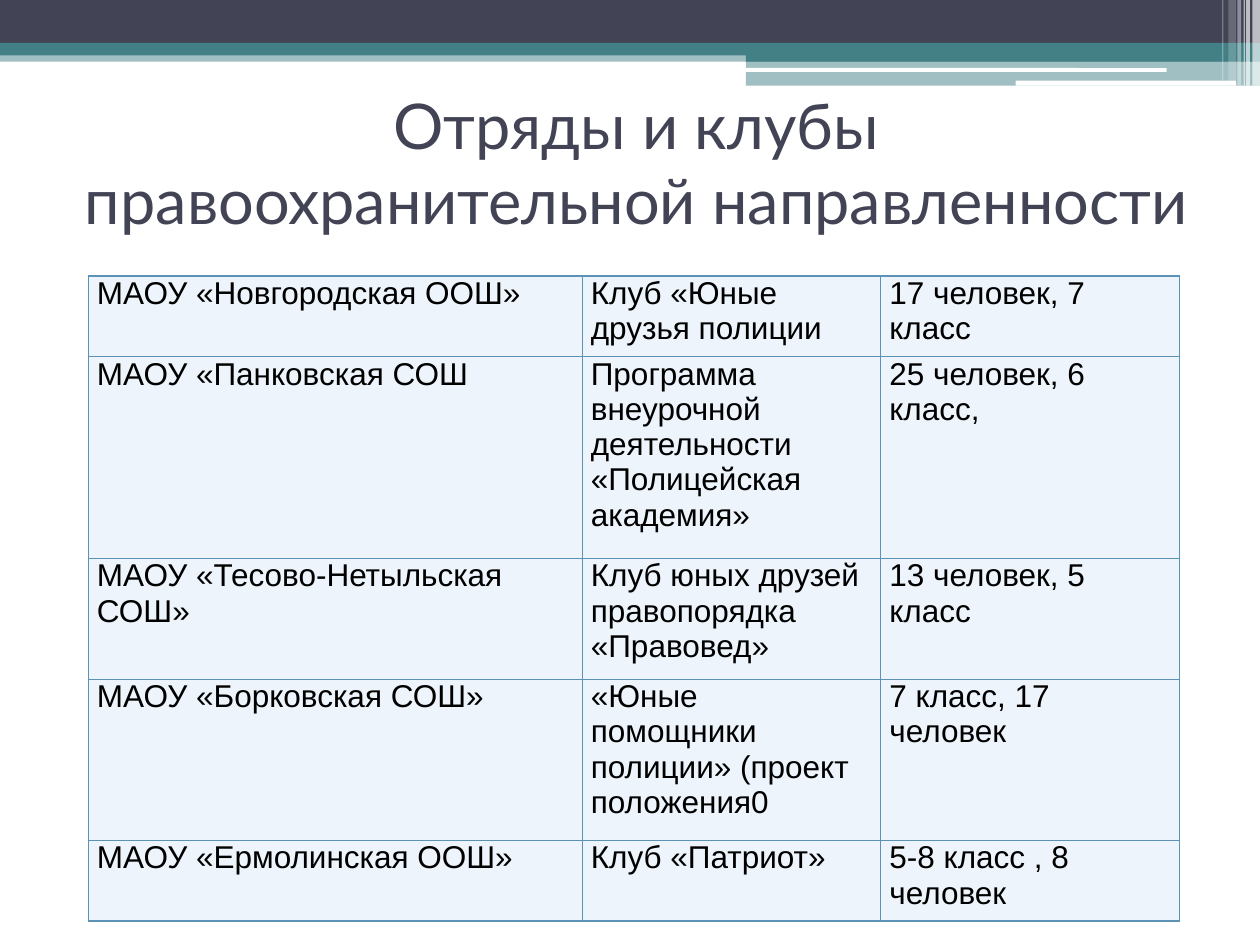
from lxml.etree import SubElement
from pptx import Presentation
from pptx.dml.color import RGBColor
from pptx.enum.shapes import MSO_SHAPE
from pptx.enum.text import MSO_ANCHOR, PP_ALIGN
from pptx.oxml import parse_xml
from pptx.oxml.ns import nsdecls, qn
from pptx.util import Inches, Pt

NAVY = RGBColor(0x42, 0x44, 0x56)
TEAL = RGBColor(0x43, 0x80, 0x86)
WHITE = RGBColor(0xFF, 0xFF, 0xFF)
BLACK = RGBColor(0, 0, 0)
PALE = RGBColor(0xED, 0xF4, 0xFB)
EDGE = RGBColor(0x5C, 0x92, 0xB5)

# left, top, width, height, colour, opacity in percent
BANDS = [
    (0, 0.4, 10, 0.09, TEAL, 50),
    (0, 0, 10, 0.34, NAVY, 100),
    (0, 0.34, 10, 0.1, TEAL, 100),
    (5.92, 0.39, 4.08, 0.1, TEAL, 100),
    (5.92, 0.48, 4.08, 0.2, TEAL, 50),
]
BARS = [
    (5.91, 0.54, 3.35, 0.03, WHITE, 100),
    (8.06, 0.64, 1.75, 0.04, WHITE, 100),
]
# left, width, height, opacity of the upright stripes
STRIPES = [
    (9.94, 0.06, 0.68, 65),
    (9.89, 0.03, 0.68, 65),
    (9.87, 0.01, 0.68, 60),
    (9.82, 0.03, 0.68, 40),
    (9.75, 0.06, 0.64, 20),
    (9.7, 0.01, 0.64, 30),
]

COLS = [3.92, 2.37, 2.37]
ROWS = [0.64, 1.6, 0.96, 1.28, 0.64]
CLUBS = [
    ("МАОУ «Новгородская ООШ»", "Клуб «Юные друзья полиции",
     "17 человек, 7 класс"),
    ("МАОУ «Панковская СОШ",
     "Программа внеурочной деятельности «Полицейская академия»",
     "25 человек, 6 класс,"),
    ("МАОУ «Тесово-Нетыльская СОШ»",
     "Клуб юных друзей правопорядка «Правовед»", "13 человек, 5 класс"),
    ("МАОУ «Борковская СОШ»",
     "«Юные помощники полиции» (проект положения0", "7 класс, 17 человек"),
    ("МАОУ «Ермолинская ООШ»", "Клуб «Патриот»", "5-8 класс , 8 человек"),
]


def style(para, name, size, color):
    para.font.name = name
    para.font.size = Pt(size)
    para.font.color.rgb = color


def add_block(slide, kind, left, top, width, height, color, alpha):
    block = slide.shapes.add_shape(
        kind, Inches(left), Inches(top), Inches(width), Inches(height))
    block.shadow.inherit = False
    block.line.fill.background()
    block.fill.solid()
    block.fill.fore_color.rgb = color
    if alpha < 100:
        tint = block.fill._xPr.find(qn("a:solidFill"))[0]
        SubElement(tint, qn("a:alpha"), val=str(alpha * 1000))


def add_title(slide, text):
    box = slide.shapes.add_textbox(
        Inches(0.55), Inches(0.7), Inches(9), Inches(1.17))
    frame = box.text_frame
    frame.word_wrap = True
    frame.vertical_anchor = MSO_ANCHOR.MIDDLE
    para = frame.paragraphs[0]
    para.text = text
    para.alignment = PP_ALIGN.CENTER
    style(para, "Lato", 36, NAVY)


def add_edges(cell):
    props = cell._tc.get_or_add_tcPr()
    for place, side in enumerate("LRTB"):
        props.insert(place, parse_xml(
            f'<a:ln{side} {nsdecls("a")} w="{Pt(0.75)}"><a:solidFill>'
            f'<a:srgbClr val="{EDGE}"/></a:solidFill></a:ln{side}>'))


def fill_cell(cell, text):
    cell.fill.solid()
    cell.fill.fore_color.rgb = PALE
    cell.margin_left = cell.margin_right = Inches(0.07)
    cell.margin_top = cell.margin_bottom = 0
    cell.text = text
    style(cell.text_frame.paragraphs[0], "Arial", 18, BLACK)
    add_edges(cell)


def add_clubs(slide):
    table = slide.shapes.add_table(
        len(ROWS), len(COLS), Inches(0.7), Inches(2.19),
        Inches(sum(COLS)), Inches(sum(ROWS))).table
    table.first_row = table.horz_banding = False
    for col, width in zip(table.columns, COLS):
        col.width = Inches(width)
    for row, height, texts in zip(table.rows, ROWS, CLUBS):
        row.height = Inches(height)
        for cell, text in zip(row.cells, texts):
            fill_cell(cell, text)


def main():
    deck = Presentation()
    deck.slide_width, deck.slide_height = Inches(10), Inches(7.5)
    slide = deck.slides.add_slide(deck.slide_layouts[6])

    # Header bands, white bars and stripes
    for band in BANDS:
        add_block(slide, MSO_SHAPE.RECTANGLE, *band)
    for bar in BARS:
        add_block(slide, MSO_SHAPE.ROUNDED_RECTANGLE, *bar)
    for left, width, height, alpha in STRIPES:
        add_block(slide, MSO_SHAPE.RECTANGLE,
                  left, 0, width, height, WHITE, alpha)

    # Title and table of clubs
    add_title(slide, "Отряды и клубы правоохранительной направленности")
    add_clubs(slide)
    deck.save("out.pptx")


if __name__ == "__main__":
    main()
